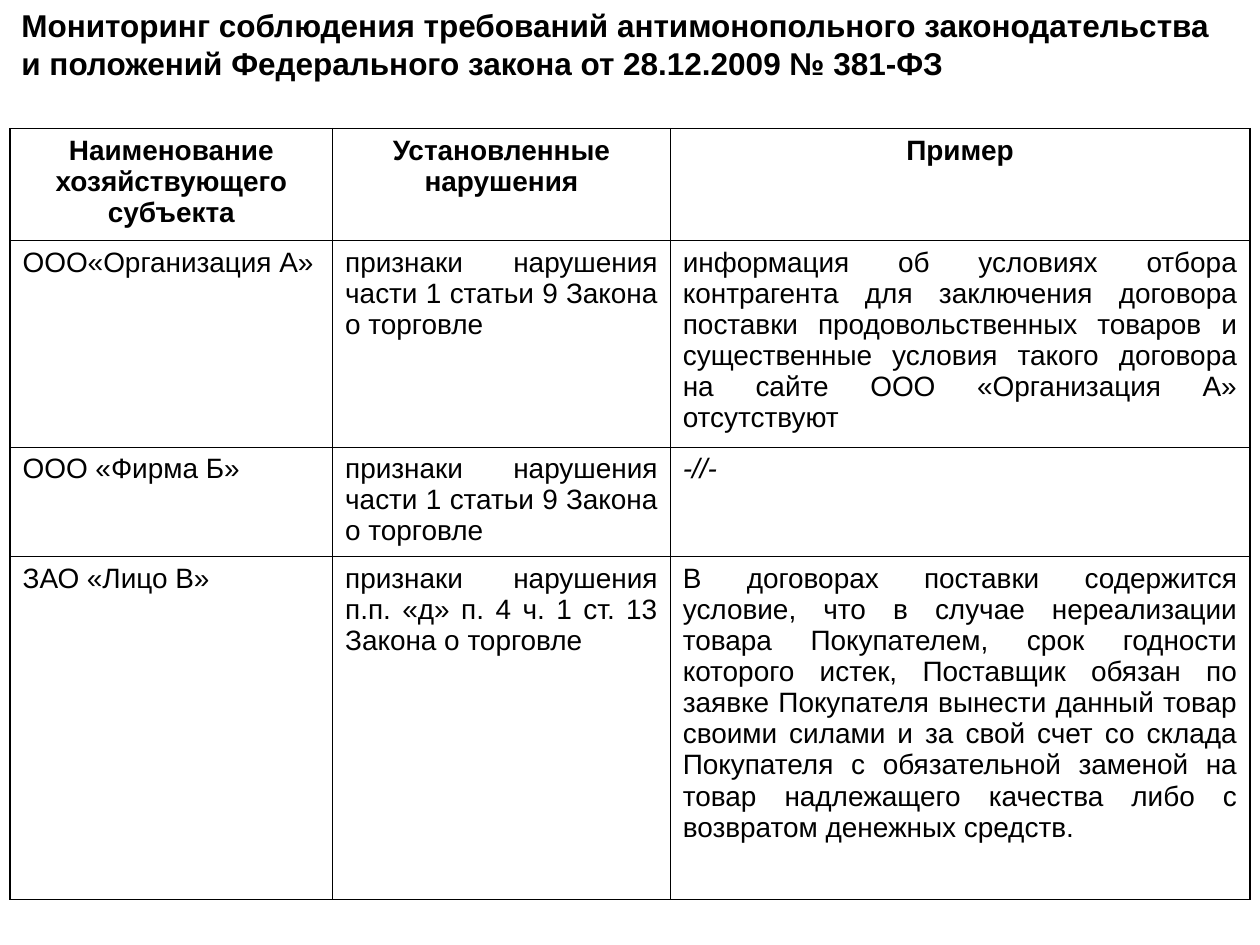
from dataclasses import dataclass

from lxml.etree import SubElement
from pptx import Presentation
from pptx.dml.color import RGBColor
from pptx.enum.text import MSO_ANCHOR, MSO_AUTO_SIZE, PP_ALIGN
from pptx.oxml.ns import qn
from pptx.util import Inches, Pt


@dataclass(frozen=True)
class Theme:
    font: str = "Arial"
    ink: str = "000000"
    title_size: int = 18
    table_size: int = 16
    outer_border: float = 1
    inner_border: float = 0.75


theme = Theme()


def format_paragraph(paragraph, alignment, size, bold, italic=False):
    paragraph.alignment = alignment
    font = paragraph.runs[0].font
    values = {"name": theme.font, "size": Pt(size), "bold": bold, "italic": italic}
    for attribute, value in values.items():
        setattr(font, attribute, value)
    font.color.rgb = RGBColor.from_string(theme.ink)


def add_border(cell, side, width):
    properties = cell._tc.get_or_add_tcPr()
    line = SubElement(properties, qn(f"a:{side}"), w=str(Pt(width)))
    fill = SubElement(line, qn("a:solidFill"))
    SubElement(fill, qn("a:srgbClr"), val=theme.ink)


presentation = Presentation()
presentation.slide_width = Inches(10)
presentation.slide_height = Inches(7.5)
slide = presentation.slides.add_slide(presentation.slide_layouts[5])

title = slide.shapes.title
title_place = {
    "left": Inches(0.07),
    "top": Inches(0),
    "width": Inches(9.85),
    "height": Inches(0.94),
}
for attribute, value in title_place.items():
    setattr(title, attribute, value)
title_frame = title.text_frame
title_frame.text = (
    "Мониторинг соблюдения требований антимонопольного законодательства "
    "и положений Федерального закона от 28.12.2009 № 381-ФЗ"
)
frame_format = {
    "word_wrap": True,
    "auto_size": MSO_AUTO_SIZE.NONE,
    "vertical_anchor": MSO_ANCHOR.TOP,
    "margin_left": Inches(0.1),
    "margin_top": Inches(0.05),
    "margin_right": Inches(0.1),
    "margin_bottom": Inches(0.05),
}
for attribute, value in frame_format.items():
    setattr(title_frame, attribute, value)
format_paragraph(title_frame.paragraphs[0], PP_ALIGN.LEFT, theme.title_size, True)

trade_violation = "признаки нарушения части 1 статьи 9 Закона о торговле"
same_example = "-//-"
rows = [
    (
        "Наименование хозяйствующего субъекта",
        "Установленные нарушения",
        "Пример",
    ),
    (
        "ООО«Организация А»",
        trade_violation,
        "информация об условиях отбора контрагента для заключения договора "
        "поставки продовольственных товаров и существенные условия такого "
        "договора на сайте ООО «Организация А» отсутствуют",
    ),
    ("ООО «Фирма Б»", trade_violation, same_example),
    (
        "ЗАО «Лицо В»",
        "признаки нарушения п.п. «д» п. 4 ч. 1 ст. 13 Закона о торговле",
        "В договорах поставки содержится условие, что в случае нереализации "
        "товара Покупателем, срок годности которого истек, Поставщик обязан по "
        "заявке Покупателя вынести данный товар своими силами и за свой счет со "
        "склада Покупателя с обязательной заменой на товар надлежащего качества "
        "либо с возвратом денежных средств.",
    ),
]
column_widths = [2.56, 2.68, 4.6]
row_heights = [0.89, 1.64, 0.87, 2.72]
last_row = len(row_heights) - 1
last_column = len(column_widths) - 1

table = slide.shapes.add_table(
    len(row_heights),
    len(column_widths),
    Inches(0.08),
    Inches(1.02),
    Inches(sum(column_widths)),
    Inches(sum(row_heights)),
).table
for column, width in zip(table.columns, column_widths):
    column.width = Inches(width)
for row, height in zip(table.rows, row_heights):
    row.height = Inches(height)

for row_index, texts in enumerate(rows):
    header = row_index == 0
    alignment = PP_ALIGN.CENTER if header else PP_ALIGN.JUSTIFY
    for column_index, text in enumerate(texts):
        cell = table.cell(row_index, column_index)
        cell.text = text
        format_paragraph(
            cell.text_frame.paragraphs[0],
            alignment,
            theme.table_size,
            header,
            text == same_example,
        )
        outer_sides = {
            "lnL": column_index == 0,
            "lnR": column_index == last_column,
            "lnT": row_index == 0,
            "lnB": row_index == last_row,
        }
        for side, outer in outer_sides.items():
            add_border(cell, side, theme.outer_border if outer else theme.inner_border)
        cell.fill.background()

presentation.save("out.pptx")
